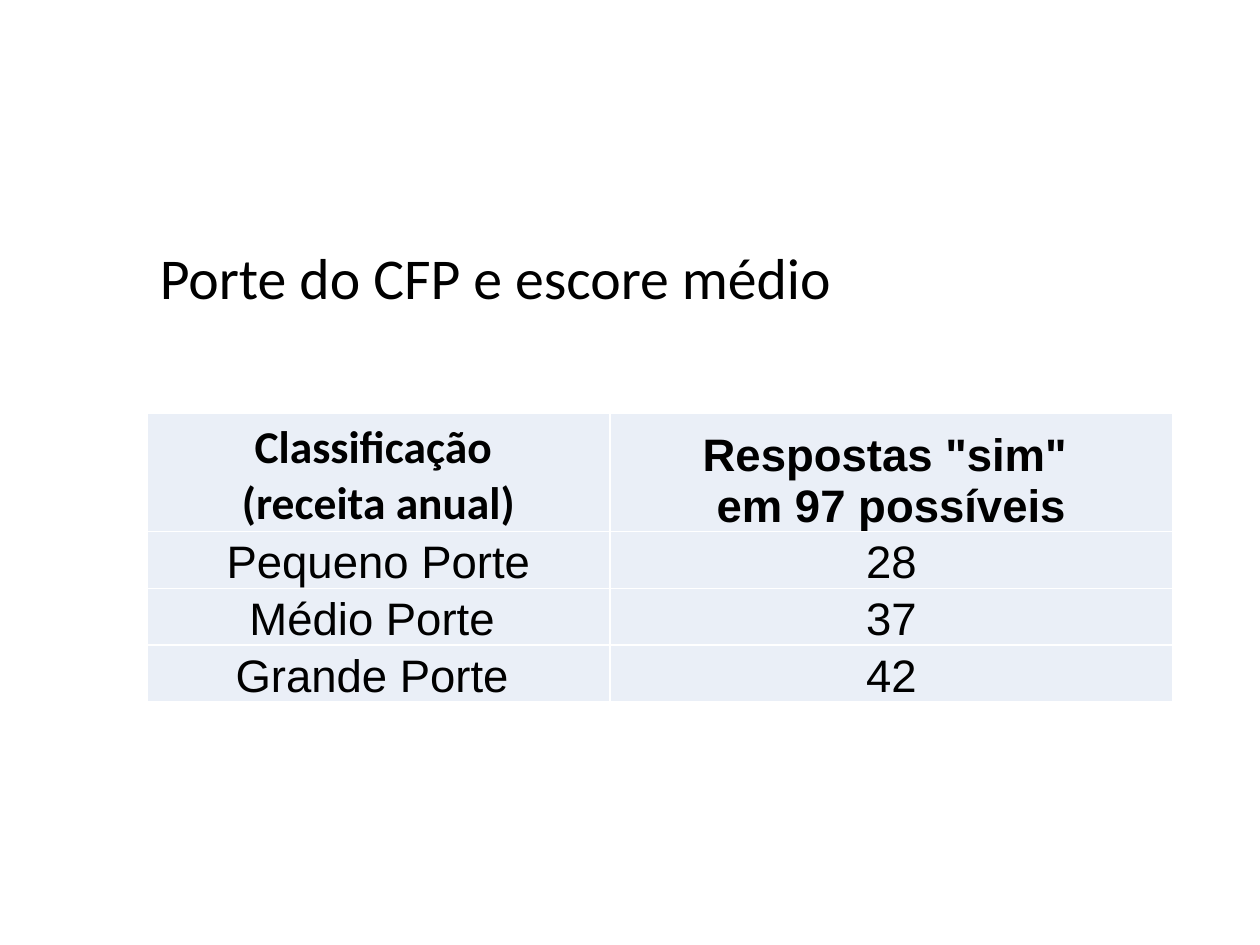
from lxml.etree import SubElement
from pptx import Presentation
from pptx.dml.color import RGBColor as Color
from pptx.enum.text import MSO_ANCHOR as Anchor, PP_ALIGN as Align
from pptx.oxml.ns import qn
from pptx.util import Inches, Pt

TITLE = "Porte do CFP e escore médio"
ROWS = [
    (("Classificação ", "(receita anual)"), ('Respostas "sim" ', "em 97 possíveis")),
    (("Pequeno Porte",), ("28",)),
    (("Médio Porte ",), ("37",)),
    (("Grande Porte ",), ("42",)),
]
THEME = {
    "text": Color.from_string("000000"),
    "cell": Color.from_string("EAEFF7"),
    "border": "FFFFFF",
    "heading": "Calibri",
    "body": "Arial",
    "title_size": Pt(33),
    "cell_size": Pt(26),
    "border_width": Pt(1),
}
WIDTH, HEIGHT = Inches(10), Inches(7.5)
LEFT = Inches(1.17)
TITLE_TOP, TITLE_WIDTH, TITLE_HEIGHT = Inches(1.47), Inches(6.66), Inches(1.51)
TABLE_TOP = Inches(3.28)
COLUMNS = [Inches(3.67), Inches(4.47)]
HEADER_HEIGHT, ROW_HEIGHT = Inches(0.94), Inches(0.45)


def apply(target, values):
    for name, value in values.items():
        setattr(target, name, value)


def write(frame, lines, font, paragraph_format):
    for index, line in enumerate(lines):
        para = frame.add_paragraph() if index else frame.paragraphs[0]
        apply(para, paragraph_format)
        span = para.add_run()
        span.text = line
        apply(span.font, font)
        span.font.color.rgb = THEME["text"]


def add_borders(cell):
    properties = cell._tc.get_or_add_tcPr()
    for position, side in enumerate(("lnL", "lnR", "lnT", "lnB")):
        line = properties.makeelement(qn(f"a:{side}"), {"w": str(THEME["border_width"])})
        fill = SubElement(line, qn("a:solidFill"))
        SubElement(fill, qn("a:srgbClr"), val=THEME["border"])
        properties.insert(position, line)


def add_title(page):
    box = page.shapes.add_textbox(LEFT, TITLE_TOP, TITLE_WIDTH, TITLE_HEIGHT)
    apply(box.text_frame, {"word_wrap": True, "vertical_anchor": Anchor.MIDDLE})
    font = {"name": THEME["heading"], "size": THEME["title_size"]}
    write(box.text_frame, [TITLE], font, {"line_spacing": 0.9})


def add_scores(page):
    heights = [HEADER_HEIGHT] + [ROW_HEIGHT] * (len(ROWS) - 1)
    table = page.shapes.add_table(
        len(ROWS), len(COLUMNS), LEFT, TABLE_TOP, sum(COLUMNS), sum(heights)
    ).table
    apply(table, {"first_row": False, "horz_banding": False})
    for column, width in zip(table.columns, COLUMNS):
        column.width = width
    margins = {f"margin_{side}": 0 for side in ("left", "right", "top", "bottom")}
    for r, row in enumerate(ROWS):
        table.rows[r].height = heights[r]
        for c, lines in enumerate(row):
            cell = table.cell(r, c)
            apply(cell, {"vertical_anchor": Anchor.BOTTOM, **margins})
            cell.fill.solid()
            cell.fill.fore_color.rgb = THEME["cell"]
            add_borders(cell)
            face = THEME["heading"] if r == c == 0 else THEME["body"]
            font = {"name": face, "size": THEME["cell_size"], "bold": r == 0}
            write(cell.text_frame, lines, font, {"alignment": Align.CENTER})


def main():
    deck = Presentation()
    apply(deck, {"slide_width": WIDTH, "slide_height": HEIGHT})
    page = deck.slides.add_slide(deck.slide_layouts[6])
    add_title(page)
    add_scores(page)
    deck.save("out.pptx")


if __name__ == "__main__":
    main()
